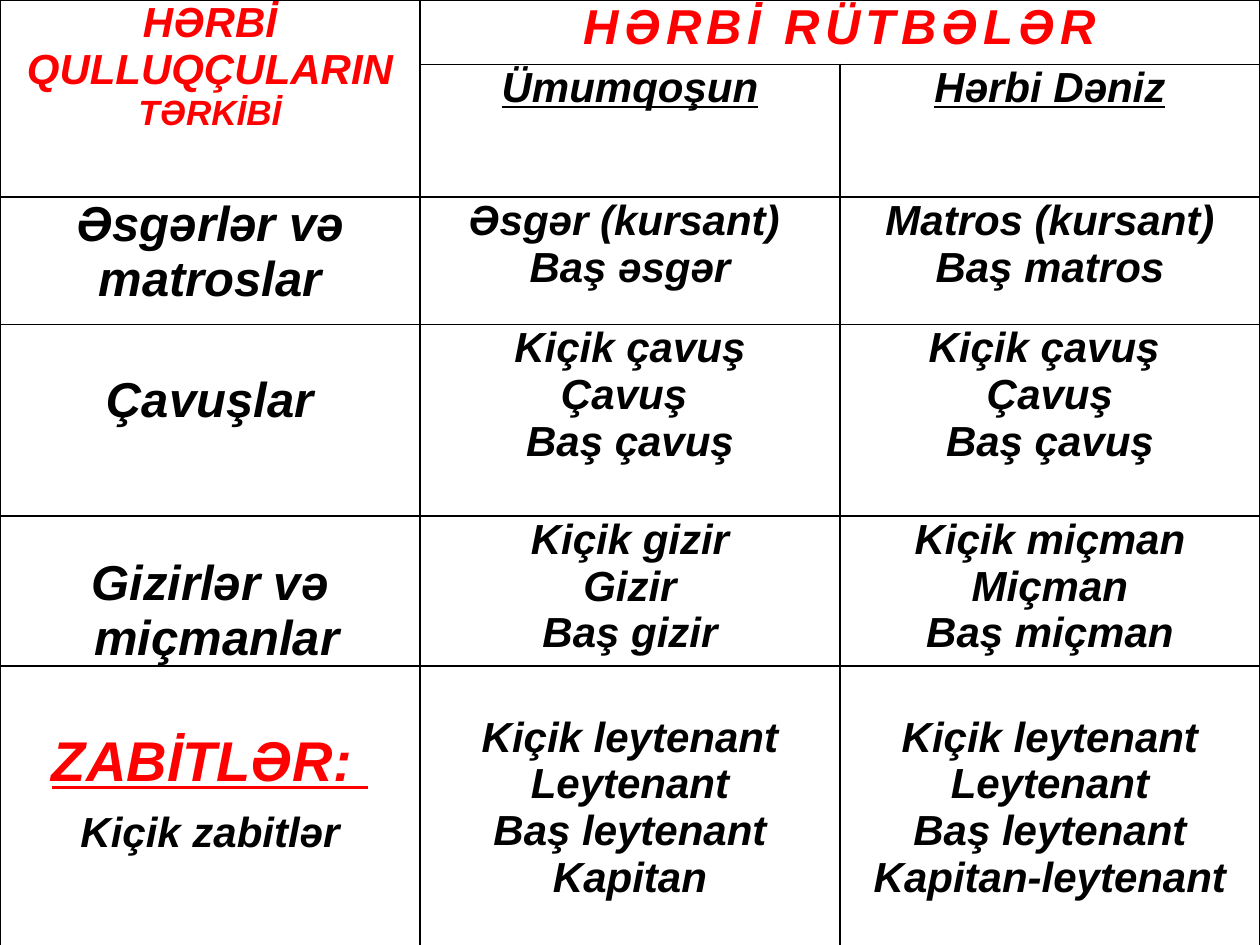
from lxml.etree import SubElement
from pptx import Presentation
from pptx.dml.color import RGBColor
from pptx.enum.text import PP_ALIGN
from pptx.oxml.ns import qn
from pptx.util import Cm, Pt

COLORS = {"heading": "FF0000", "body": "000000", "border": "000000"}
ROW_HEIGHTS = [1.3, 1.3, 2.57, 3.86, 3.02, 6.17]
RANK_GROUPS = [
    (["Əsgər (kursant) ", "Baş əsgər"],
     ["Matros (kursant)", "Baş matros"], 0),
    (["Kiçik çavuş", "Çavuş ", "Baş çavuş"],
     ["Kiçik çavuş ", "Çavuş", "Baş çavuş"], 0),
    (["Kiçik gizir", "Gizir", "Baş gizir"],
     ["Kiçik miçman", "Miçman", "Baş miçman"], 0),
    (["Kiçik leytenant", "Leytenant", "Baş leytenant", "Kapitan"],
     ["Kiçik leytenant", "Leytenant", "Baş leytenant", "Kapitan-leytenant"], 0.97),
]
STAFF_GROUPS = [
    (["Əsgərlər və matroslar"], 0),
    (["Çavuşlar"], 0.97),
    (["Gizirlər və", " miçmanlar"], 0.81),
]


def add_text(paragraph, text, size=24, color="body", underline=False, spacing=0):
    paragraph.alignment = PP_ALIGN.CENTER
    run = paragraph.add_run()
    run.text = text
    font = run.font
    font.name = "Arial"
    font.size = Pt(size)
    font.bold = font.italic = True
    font.underline = underline
    font.color.rgb = RGBColor.from_string(COLORS[color])
    if spacing:
        run._r.get_or_add_rPr().set("spc", str(spacing * 100))


def fill_cell(cell, lines, top=0, **text_format):
    cell.margin_top = Cm(top)
    for index, line in enumerate(lines):
        frame = cell.text_frame
        paragraph = frame.add_paragraph() if index else frame.paragraphs[0]
        add_text(paragraph, line, **text_format)


def format_cell(cell):
    cell.margin_left = cell.margin_right = Cm(0.18)
    cell.margin_top = cell.margin_bottom = 0
    properties = cell._tc.get_or_add_tcPr()
    for side in ("a:lnL", "a:lnR", "a:lnT", "a:lnB"):
        border = SubElement(properties, qn(side), w=str(Pt(1)))
        solid = SubElement(border, qn("a:solidFill"))
        SubElement(solid, qn("a:srgbClr"), val=COLORS["border"])
    cell.fill.background()


def fill_header(ranks):
    staff_header = ranks.cell(0, 0)
    staff_header.merge(ranks.cell(1, 0))
    ranks.cell(0, 1).merge(ranks.cell(0, 2))
    fill_cell(staff_header, ["HƏRBİ QULLUQÇULARIN "], color="heading")
    add_text(staff_header.text_frame.paragraphs[0], "TƏRKİBİ", size=20, color="heading")
    fill_cell(ranks.cell(0, 1), ["HƏRBİ RÜTBƏLƏR"], size=28, color="heading", spacing=3)
    for column, branch in enumerate(["Ümumqoşun", "Hərbi Dəniz"], start=1):
        fill_cell(ranks.cell(1, column), [branch], underline=True)


def fill_officers(cell):
    fill_cell(cell, ["ZABİTLƏR: "], top=1.3, size=32, color="heading", underline=True)
    junior_officers = cell.text_frame.add_paragraph()
    junior_officers.space_before = Pt(9.2)
    add_text(junior_officers, "Kiçik zabitlər")


def add_rank_table(slide, left, top, width):
    ranks = slide.shapes.add_table(
        len(ROW_HEIGHTS), 3, left, top, width, Cm(sum(ROW_HEIGHTS))
    ).table
    ranks.first_row = ranks.horz_banding = False
    for column in ranks.columns:
        column.width = width // 3
    for row, height in zip(ranks.rows, ROW_HEIGHTS):
        row.height = Cm(height)
    for cell in ranks.iter_cells():
        format_cell(cell)
    fill_header(ranks)
    for row, (staff, gap) in enumerate(STAFF_GROUPS, start=2):
        fill_cell(ranks.cell(row, 0), staff, top=gap, size=28)
    fill_officers(ranks.cell(5, 0))
    for row, (army, navy, gap) in enumerate(RANK_GROUPS, start=2):
        fill_cell(ranks.cell(row, 1), army, top=gap)
        fill_cell(ranks.cell(row, 2), navy, top=gap)


def main():
    deck = Presentation()
    deck.slide_width, deck.slide_height = Cm(25.4), Cm(19.05)
    slide = deck.slides.add_slide(deck.slide_layouts[6])
    add_rank_table(slide, 0, 0, deck.slide_width)
    deck.save("out.pptx")


if __name__ == "__main__":
    main()
